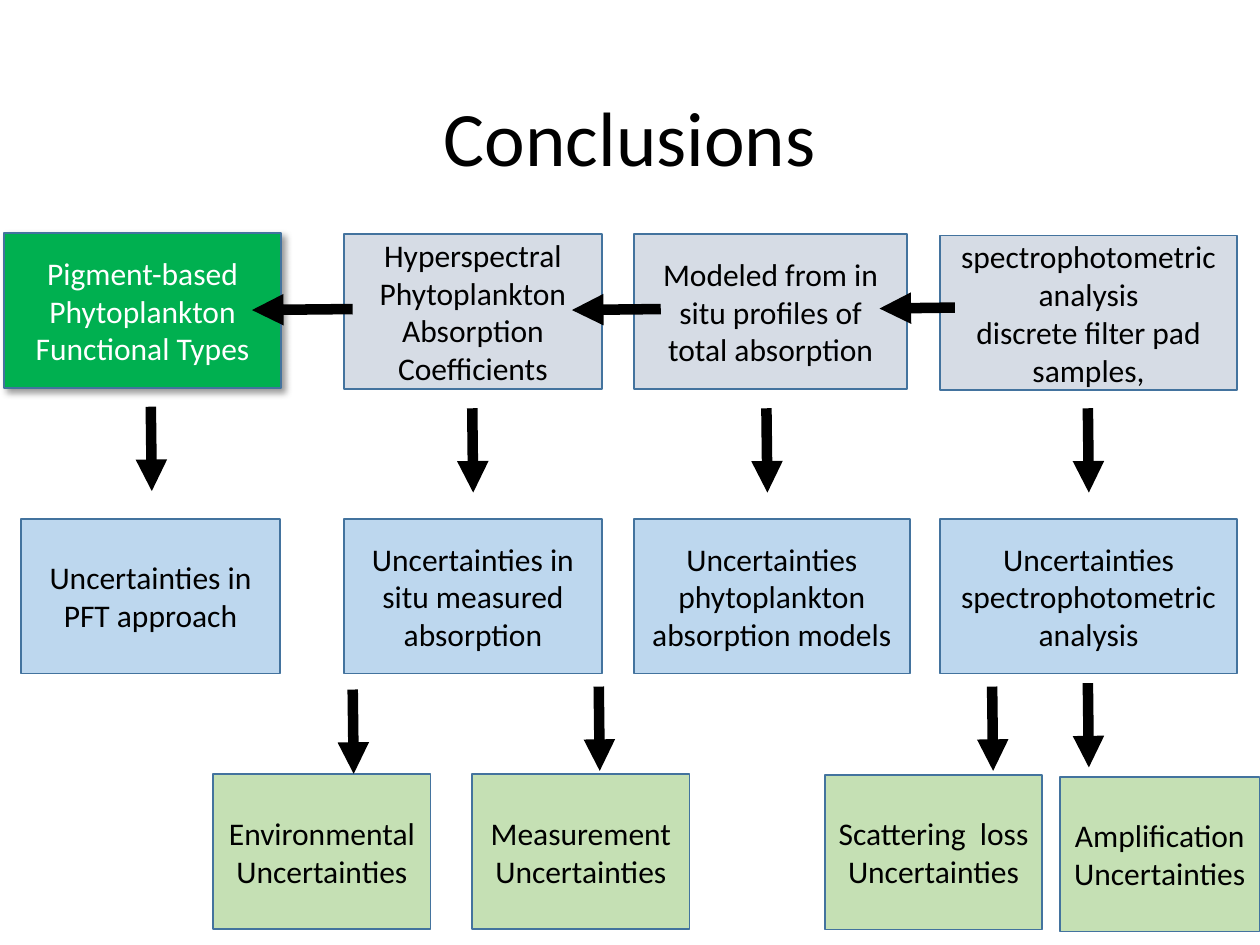
from lxml import etree
from pptx import Presentation
from pptx.dml.color import RGBColor
from pptx.enum.shapes import MSO_CONNECTOR, MSO_SHAPE
from pptx.enum.text import MSO_ANCHOR, PP_ALIGN
from pptx.oxml.ns import qn
from pptx.util import Cm, Pt

RECTANGLE = MSO_SHAPE.RECTANGLE
STRAIGHT = MSO_CONNECTOR.STRAIGHT
MIDDLE = MSO_ANCHOR.MIDDLE
CENTER = PP_ALIGN.CENTER

BLACK = RGBColor(0x00, 0x00, 0x00)
WHITE = RGBColor(0xFF, 0xFF, 0xFF)
GREEN = RGBColor(0x00, 0xB0, 0x50)
GREY = RGBColor(0xD6, 0xDC, 0xE5)
BLUE = RGBColor(0xBD, 0xD7, 0xEE)
PALE_GREEN = RGBColor(0xC5, 0xE0, 0xB4)
OUTLINE = RGBColor(0x43, 0x73, 0x9E)

BOX_HEIGHT = 3.12
ARROW_LENGTH = 1.7
TITLE_FONT = {"name": "Calibri", "size": Pt(44), "bold": False}
BOX_FONT = {"name": "Calibri", "size": Pt(18)}
TITLE_PLACE = {"left": Cm(1.75), "top": Cm(1.02), "width": Cm(21.9), "height": Cm(3.68)}

PRODUCT = (0.08, 4.7, 5.59, "Pigment-based Phytoplankton Functional Types")
SOURCES = [
    (6.93, 4.72, 5.21, "Hyperspectral Phytoplankton Absorption Coefficients"),
    (12.78, 4.72, 5.51, "Modeled from in situ profiles of total absorption"),
    (18.95, 4.75, 5.99, "spectrophotometric analysis\ndiscrete filter pad samples,"),
]
UNCERTAINTIES = [
    (0.43, 10.46, 5.21, "Uncertainties in PFT approach"),
    (6.93, 10.46, 5.21, "Uncertainties in situ measured absorption"),
    (12.78, 10.46, 5.56, "Uncertainties phytoplankton absorption models"),
    (18.95, 10.46, 5.99, "Uncertainties spectrophotometric analysis"),
]
CAUSES = [
    (4.3, 15.61, 4.38, "Environmental Uncertainties"),
    (9.52, 15.61, 4.38, "Measurement Uncertainties"),
    (16.63, 15.62, 4.38, "Scattering  loss Uncertainties"),
    (21.37, 15.66, 4.02, "Amplification Uncertainties"),
]
LEFT_ARROWS = [(7.11, 5.08, 6.23), (13.32, 11.53, 6.23), (19.25, 17.73, 6.2)]
DOWN_ARROWS = [
    (3.04, 8.2), (9.52, 8.23), (15.45, 8.23), (21.93, 8.23),
    (7.11, 13.9), (12.07, 13.84), (20, 13.84), (21.93, 13.77),
]


def apply_format(target, values):
    """Set each attribute of the target from a dict of values."""
    for name, value in values.items():
        setattr(target, name, value)


def format_text(frame, font, color, para_format):
    """Anchor the text in the middle and format every run."""
    apply_format(frame, {"word_wrap": True, "vertical_anchor": MIDDLE})
    for para in frame.paragraphs:
        apply_format(para, para_format)
        for span in para.runs:
            apply_format(span.font, font)
            span.font.color.rgb = color


def add_title(page, text):
    """Place and format the title placeholder."""
    title = page.shapes.title
    apply_format(title, TITLE_PLACE)
    title.text_frame.text = text
    format_text(title.text_frame, TITLE_FONT, BLACK, {"alignment": CENTER, "line_spacing": 0.9})


def add_box(page, left, top, width, text, fill, color=BLACK):
    """Add an outlined rectangle with centred text."""
    box = page.shapes.add_shape(RECTANGLE, Cm(left), Cm(top), Cm(width), Cm(BOX_HEIGHT))
    box.shadow.inherit = False
    box.fill.solid()
    box.fill.fore_color.rgb = fill
    box.line.color.rgb = OUTLINE
    box.line.width = Pt(1)
    box.text_frame.text = text
    format_text(box.text_frame, BOX_FONT, color, {"alignment": CENTER})
    return box


def add_shadow(box):
    """Give a box a soft shadow towards the lower right."""
    effects = box._element.spPr.find(qn("a:effectLst"))
    shadow = etree.SubElement(
        effects, qn("a:outerShdw"), blurRad=str(Pt(4)), dist=str(Pt(3)),
        dir="2700000", algn="tl", rotWithShape="0")
    color = etree.SubElement(shadow, qn("a:srgbClr"), val=str(BLACK))
    etree.SubElement(color, qn("a:alpha"), val="40000")


def add_arrow(page, start, end):
    """Add a thick black arrow between two points."""
    arrow = page.shapes.add_connector(STRAIGHT, *map(Cm, start + end))
    arrow.line.color.rgb = BLACK
    arrow.line.width = Pt(6)
    etree.SubElement(arrow.line._get_or_add_ln(), qn("a:tailEnd"), type="triangle")
    etree.SubElement(arrow._element.spPr, qn("a:effectLst"))


def main():
    """Build the conclusions slide and save it."""
    deck = Presentation()
    apply_format(deck, {"slide_width": Cm(25.4), "slide_height": Cm(19.05)})
    page = deck.slides.add_slide(deck.slide_layouts[5])
    add_title(page, "Conclusions")
    add_shadow(add_box(page, *PRODUCT, GREEN, WHITE))
    for boxes, fill in ((SOURCES, GREY), (UNCERTAINTIES, BLUE), (CAUSES, PALE_GREEN)):
        for box in boxes:
            add_box(page, *box, fill)
    for start, end, level in LEFT_ARROWS:
        add_arrow(page, (start, level), (end, level + 0.02))
    for left, top in DOWN_ARROWS:
        add_arrow(page, (left, top), (left + 0.02, top + ARROW_LENGTH))
    deck.save("out.pptx")


if __name__ == "__main__":
    main()
